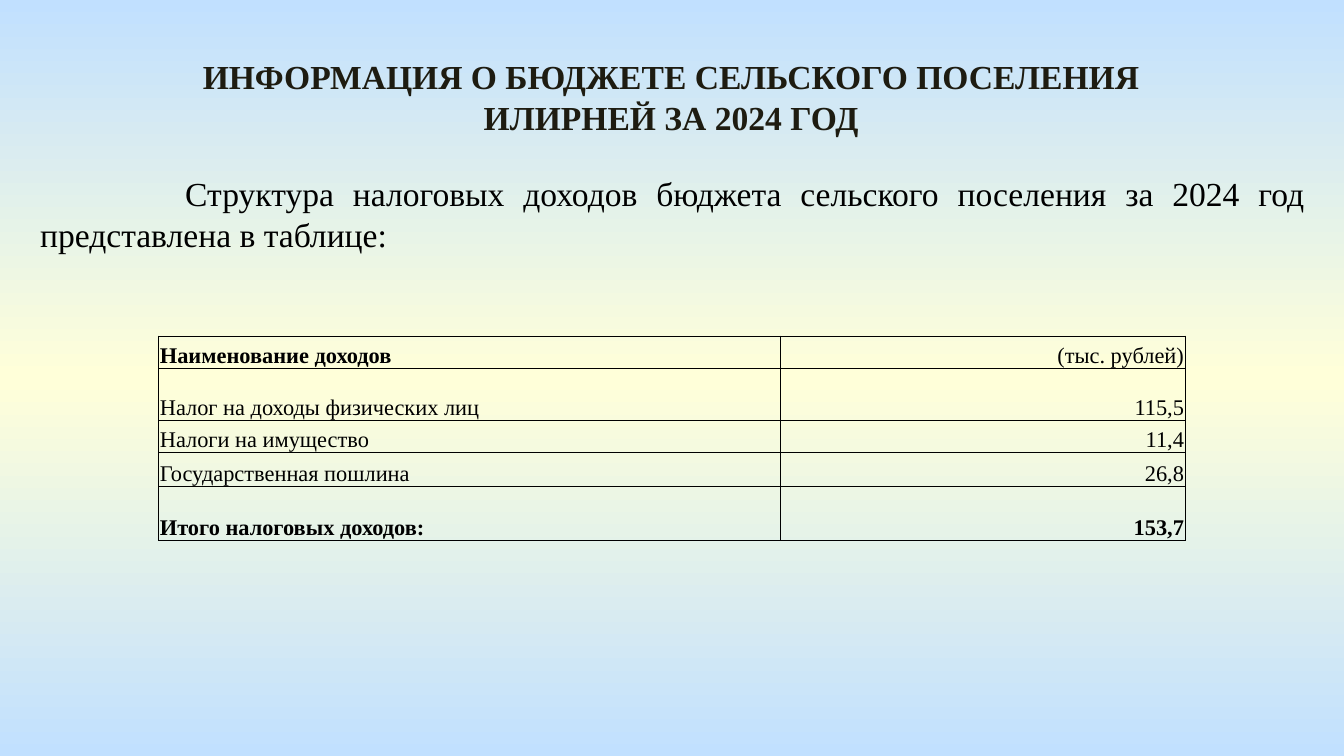
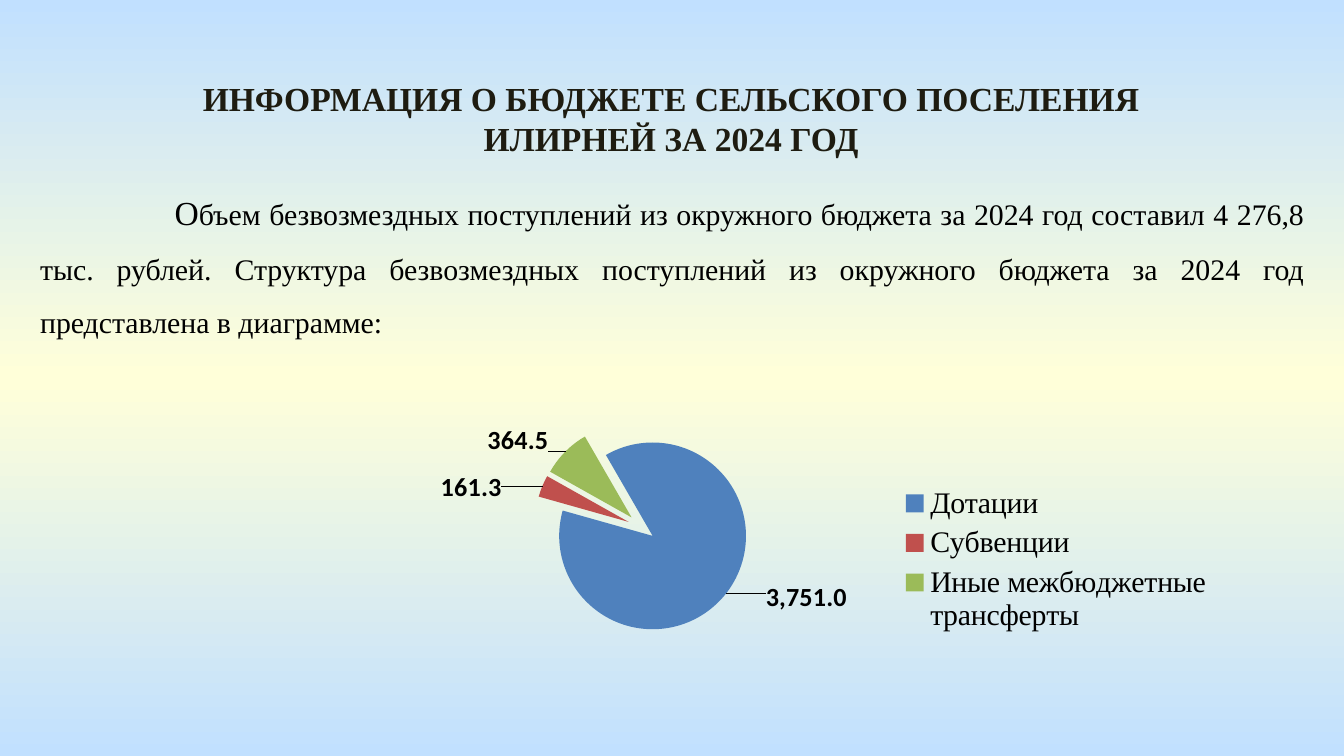
from typing import NamedTuple

from lxml.etree import SubElement
from pptx import Presentation
from pptx.chart.data import CategoryChartData
from pptx.dml.color import RGBColor
from pptx.enum.chart import XL_CHART_TYPE, XL_LABEL_POSITION, XL_LEGEND_POSITION
from pptx.enum.text import MSO_ANCHOR, MSO_AUTO_SIZE, PP_ALIGN
from pptx.oxml.ns import qn
from pptx.util import Inches, Pt

# Shared look
COLORS = {
    "sky": "C1E0FF", "cream": "FFFFD9", "title": "1E1C11", "text": "000000",
    "blue": "4F81BD", "red": "C0504D", "green": "9BBB59",
}
SERIF, SANS = "Times New Roman", "Calibri"
TITLE = "ИНФОРМАЦИЯ О БЮДЖЕТЕ СЕЛЬСКОГО ПОСЕЛЕНИЯ ИЛИРНЕЙ ЗА 2024 ГОД"
WIDTH = Inches(10)
SIZE = {"slide_width": WIDTH, "slide_height": WIDTH * 9 // 16}
HEAD = {"name": SERIF, "size": Pt(18), "bold": True}
BODY = {"name": SERIF, "size": Pt(18), "bold": False}
SMALL = BODY | {"size": Pt(16)}
CELL = BODY | {"size": Pt(12)}
LABEL = {"name": SANS, "size": Pt(14), "bold": True}
FRAME = {"word_wrap": True, "auto_size": MSO_AUTO_SIZE.SHAPE_TO_FIT_TEXT}
PAD = {"vertical_anchor": MSO_ANCHOR.BOTTOM, "margin_left": Inches(0.01),
       "margin_right": Inches(0.01), "margin_top": Inches(0.01), "margin_bottom": 0}


class Box(NamedTuple):
    left: float
    top: float
    width: float
    height: float


class Run(NamedTuple):
    text: str
    style: dict
    color: str = "text"


class Row(NamedTuple):
    name: str
    value: str
    height: float
    bold: tuple = (False, False)


class Slice(NamedTuple):
    name: str
    value: float
    color: str
    shift: tuple


ROWS = [
    Row("Наименование доходов", "(тыс. рублей)", 0.24, (True, False)),
    Row("Налог на доходы физических лиц", "115,5", 0.39),
    Row("Налоги на имущество", "11,4", 0.24),
    Row("Государственная пошлина", "26,8", 0.25),
    Row("Итого налоговых доходов:", "153,7", 0.4, (True, True)),
]
SLICES = [
    Slice("Дотации", 3751, "blue", (0.03, -0.05)),
    Slice("Субвенции", 161.3, "red", (-0.03, 0.06)),
    Slice("Иные межбюджетные трансферты", 364.5, "green", (-0.01, 0.03)),
]


def apply(target, style: dict) -> None:
    for key, value in style.items():
        setattr(target, key, value)


def paint(font, style: dict, color: str = "text") -> None:
    apply(font, style)
    font.color.rgb = RGBColor.from_string(COLORS[color])


def place(box: Box) -> list:
    return [Inches(side) for side in box]


def write(para, runs: list, align) -> None:
    para.alignment = align
    for item in runs:
        run = para.add_run()
        run.text = item.text
        paint(run.font, item.style, item.color)


def add_text(slide, box: Box, runs: list, align=PP_ALIGN.JUSTIFY,
             indent: float = 0, spacing: float = 1.0) -> None:
    frame = slide.shapes.add_textbox(*place(box)).text_frame
    apply(frame, FRAME)
    para = frame.paragraphs[0]
    para.line_spacing = spacing
    write(para, runs, align)
    para._p.get_or_add_pPr().set("indent", str(Inches(indent)))


def add_page(deck, top: float):
    """Add a slide with the shared background and title."""
    slide = deck.slides.add_slide(deck.slide_layouts[6])
    fill = slide.background.fill
    fill.gradient()
    fill.gradient_angle = 90
    stops = next(slide._element.iter(qn("a:gsLst")))
    for stop in list(stops):
        stops.remove(stop)
    for pos, color in ((0, "sky"), (50, "cream"), (100, "sky")):
        stop = SubElement(stops, qn("a:gs"), pos=str(pos * 1000))
        SubElement(stop, qn("a:srgbClr"), val=COLORS[color])
    add_text(slide, Box(1.13, top, 7.73, 0.71), [Run(TITLE, HEAD, "title")],
             PP_ALIGN.CENTER)
    return slide


def rule(cell) -> None:
    """Draw thin lines on all four sides of a cell."""
    props = cell._tc.get_or_add_tcPr()
    for spot, side in enumerate(("lnL", "lnR", "lnT", "lnB")):
        line = SubElement(props, qn(f"a:{side}"), w=str(Pt(0.5)))
        fill = SubElement(line, qn("a:solidFill"))
        SubElement(fill, qn("a:srgbClr"), val=COLORS["text"])
        props.insert(spot, line)


def add_grid(slide, box: Box, widths: tuple) -> None:
    table = slide.shapes.add_table(len(ROWS), len(widths), *place(box)).table
    for col, width in zip(table.columns, widths):
        col.width = Inches(width)
    for line, row in zip(table.rows, ROWS):
        line.height = Inches(row.height)
        texts = (row.name, row.value)
        aligns = (PP_ALIGN.JUSTIFY, PP_ALIGN.RIGHT)
        for cell, text, align, bold in zip(line.cells, texts, aligns, row.bold):
            apply(cell, PAD)
            cell.fill.background()
            rule(cell)
            write(cell.text_frame.paragraphs[0],
                  [Run(text, CELL | {"bold": bold})], align)


def set_place(parent, spot: int, values: dict) -> None:
    """Give a chart part a manual layout."""
    for old in parent.findall(qn("c:layout")):
        parent.remove(old)
    layout = SubElement(parent, qn("c:layout"))
    manual = SubElement(layout, qn("c:manualLayout"))
    for key, value in values.items():
        SubElement(manual, qn(f"c:{key}"), val=str(value))
    parent.insert(spot, layout)


def add_pie(slide, box: Box) -> None:
    data = CategoryChartData(number_format="#,##0.0")
    data.categories = [part.name for part in SLICES]
    data.add_series("Series 1", [part.value for part in SLICES])
    chart = slide.shapes.add_chart(XL_CHART_TYPE.PIE, *place(box), data).chart
    paint(chart.font, BODY | {"name": SANS})
    apply(chart, {"has_title": False, "has_legend": True})
    apply(chart.legend, {"position": XL_LEGEND_POSITION.RIGHT,
                         "include_in_layout": False})
    paint(chart.legend.font, SMALL)

    # Plot area and turn of the pie
    plot = chart.plots[0]
    plot.vary_by_categories = True
    pie = plot._element
    for old in pie.findall(qn("c:firstSliceAng")):
        pie.remove(old)
    SubElement(pie, qn("c:firstSliceAng"), val="330")
    set_place(pie.getparent(), 0, {
        "layoutTarget": "inner", "xMode": "edge", "yMode": "edge",
        "x": 0.375, "y": 0.092, "w": 0.194, "h": 0.627})

    # Slices and labels
    series = plot.series[0]
    node = series._element
    node.find(qn("c:tx")).addnext(SubElement(node, qn("c:explosion"), val="15"))
    labels = series.data_labels
    apply(labels, {"show_value": True, "number_format": "#,##0.0",
                   "number_format_is_linked": False,
                   "position": XL_LABEL_POSITION.OUTSIDE_END})
    paint(labels.font, LABEL)
    for index, part in enumerate(SLICES):
        point = series.points[index]
        fill = point.format.fill
        fill.solid()
        fill.fore_color.rgb = RGBColor.from_string(COLORS[part.color])
        label = point.data_label
        label.position = XL_LABEL_POSITION.OUTSIDE_END
        paint(label.font, LABEL)
        mark = node.findall(".//" + qn("c:dLbl"))[index]
        set_place(mark, 1, dict(zip("xy", part.shift)))


def main() -> None:
    deck = Presentation()
    apply(deck, SIZE)

    # Tax income table
    slide = add_page(deck, 0.37)
    add_text(slide, Box(0.2, 1.24, 9.61, 0.71), [
        Run("Структура налоговых доходов бюджета сельского поселения "
            "за 2024 год представлена в таблице:", BODY)], indent=1.08)
    add_grid(slide, Box(1.18, 2.5, 7.64, 1.52), (4.63, 3.01))

    # Grants chart
    slide = add_page(deck, 0.53)
    add_text(slide, Box(0.2, 1.23, 9.61, 1.36), [
        Run("О", BODY),
        Run("бъем безвозмездных поступлений из окружного бюджета за 2024 год "
            "составил 4 276,8 тыс. рублей. Структура безвозмездных поступлений "
            "из окружного бюджета за 2024 год представлена в диаграмме:", SMALL),
    ], indent=1, spacing=1.5)
    add_pie(slide, Box(0.88, 2.89, 8.25, 2.55))
    deck.save("out.pptx")


if __name__ == "__main__":
    main()
